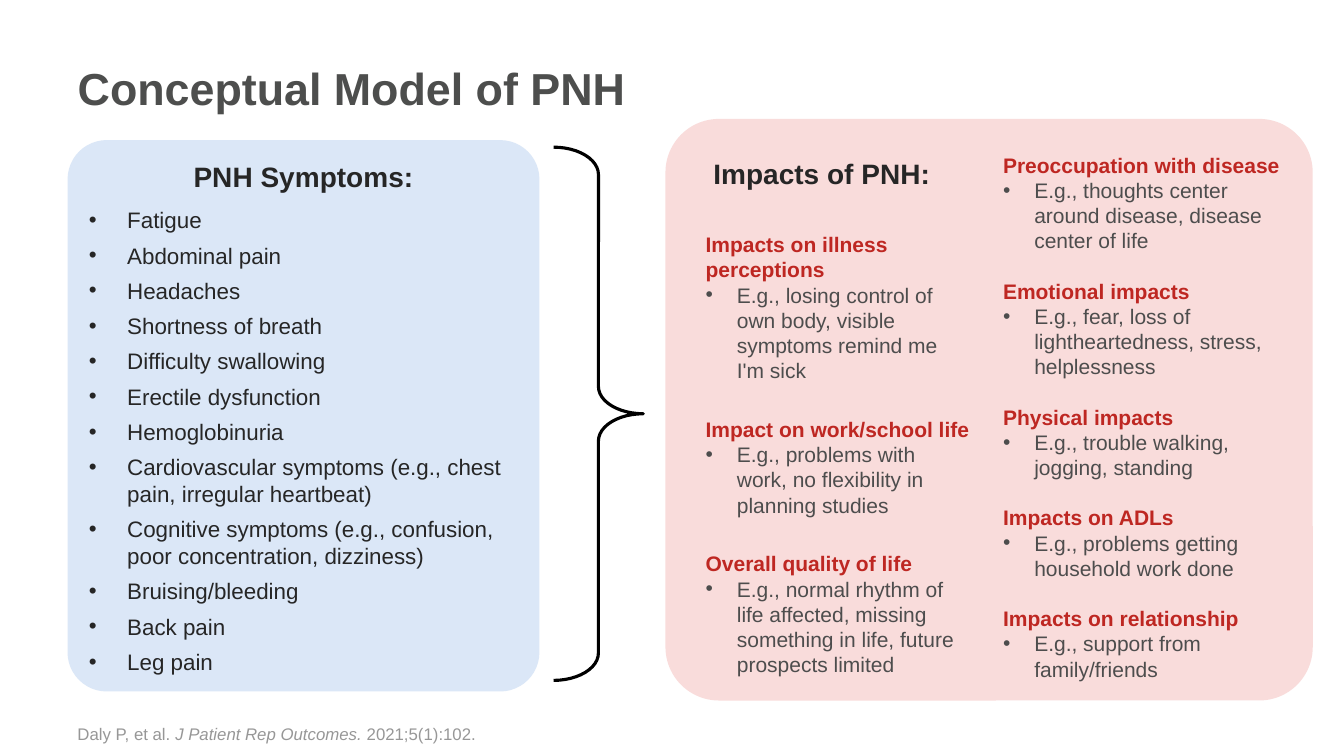
from lxml import etree
from pptx import Presentation
from pptx.dml.color import RGBColor
from pptx.enum import shapes, text
from pptx.oxml.ns import qn
from pptx.util import Inches, Pt

BLACK = RGBColor(0x00, 0x00, 0x00)
INK = RGBColor(0x26, 0x26, 0x26)
GRAY = RGBColor(0x4D, 0x4D, 0x4D)
TITLE_GRAY = RGBColor(0x4D, 0x4E, 0x4D)
LIGHT_GRAY = RGBColor(0x97, 0x97, 0x97)
RED = RGBColor(0xBE, 0x27, 0x22)
BLUE_PANEL = RGBColor(0xDB, 0xE7, 0xF7)
PINK_PANEL = RGBColor(0xF9, 0xDC, 0xDB)

SYMPTOMS = [
    "Fatigue",
    "Abdominal pain",
    "Headaches",
    "Shortness of breath",
    "Difficulty swallowing",
    "Erectile dysfunction",
    "Hemoglobinuria",
    "Cardiovascular symptoms (e.g., chest pain, irregular heartbeat)",
    "Cognitive symptoms (e.g., confusion, poor concentration, dizziness)",
    "Bruising/bleeding",
    "Back pain",
    "Leg pain",
]
LEFT_IMPACTS = [
    ("Impacts on illness perceptions",
     "E.g., losing control of own body, visible symptoms remind me I'm sick"),
    ("Impact on work/school life",
     "E.g., problems with work, no flexibility in planning studies"),
    ("Overall quality of life",
     "E.g., normal rhythm of life affected, missing something in life, future prospects limited"),
]
RIGHT_IMPACTS = [
    ("Preoccupation with disease",
     "E.g., thoughts center around disease, disease center of life"),
    ("Emotional impacts",
     "E.g., fear, loss of lightheartedness, stress, helplessness"),
    ("Physical impacts", "E.g., trouble walking, jogging, standing"),
    ("Impacts on ADLs", "E.g., problems getting household work done"),
    ("Impacts on relationship", "E.g., support from family/friends"),
]


def add_text(tf, words, size, color, bold=False, italic=False, indent=0,
             before=0, after=0, align=text.PP_ALIGN.LEFT, same_line=False):
    p = tf.paragraphs[-1]
    if p.runs and not same_line:
        p = tf.add_paragraph()
    if not same_line:
        p.alignment = align
        p.space_before, p.space_after = Pt(before), Pt(after)
    if indent:
        pPr = p._p.get_or_add_pPr()
        pPr.set("marL", str(Inches(indent)))
        pPr.set("indent", str(-Inches(indent)))
        etree.SubElement(pPr, qn("a:buFont")).set("typeface", "Arial")
        etree.SubElement(pPr, qn("a:buChar")).set("char", "•")
    r = p.add_run()
    r.text = words
    r.font.name, r.font.size = "Arial", Pt(size)
    r.font.bold, r.font.italic = bold, italic
    r.font.color.rgb = color


def add_box(parent, x, y, w, h, fill=None, adj=0):
    area = Inches(x), Inches(y), Inches(w), Inches(h)
    if fill is None:
        sp = parent.add_textbox(*area)
    else:
        sp = parent.add_shape(shapes.MSO_SHAPE.ROUNDED_RECTANGLE, *area)
        sp.adjustments[0] = adj
        sp.fill.solid()
        sp.fill.fore_color.rgb = fill
        sp.line.fill.background()
        sp.shadow.inherit = False
    sp.text_frame.word_wrap = True
    return sp.text_frame


prs = Presentation()
prs.slide_width, prs.slide_height = Inches(13.33), Inches(7.5)
s = prs.slides.add_slide(prs.slide_layouts[5])

title = s.shapes.title
title.left, title.top = Inches(0.67), Inches(0.22)
title.width, title.height = Inches(11.75), Inches(1.3)
tf = title.text_frame
tf.vertical_anchor = text.MSO_ANCHOR.MIDDLE
add_text(tf, "Conceptual Model of PNH", 32, TITLE_GRAY, bold=True)

tf = add_box(s.shapes, 0.67, 6.95, 11.75, 0.48)
tf.vertical_anchor = text.MSO_ANCHOR.BOTTOM
add_text(tf, "Daly P, et al. ", 12, LIGHT_GRAY)
add_text(tf, "J Patient Rep Outcomes. ", 12, LIGHT_GRAY, italic=True, same_line=True)
add_text(tf, "2021;5(1):102.", 12, LIGHT_GRAY, same_line=True)

tf = add_box(s.shapes, 0.67, 1.39, 4.68, 5.47, BLUE_PANEL, 0.083)
tf.vertical_anchor = text.MSO_ANCHOR.BOTTOM
for symptom in SYMPTOMS:
    add_text(tf, symptom, 16, INK, indent=0.38, after=6)

brace = s.shapes.add_shape(shapes.MSO_SHAPE.RIGHT_BRACE, Inches(5.49),
                           Inches(1.46), Inches(0.89), Inches(5.29))
brace.adjustments[0], brace.adjustments[1] = 0.305, 0.5
brace.fill.background()
brace.line.color.rgb = BLACK
brace.line.width = Pt(2.25)
brace.shadow.inherit = False

impacts = s.shapes.add_group_shape().shapes
add_box(impacts, 6.6, 1.18, 6.42, 5.77, PINK_PANEL, 0.092)

for parent, x, y, heading in [(s.shapes, 1.8, 1.53, "PNH Symptoms:"),
                              (impacts, 6.94, 1.5, "Impacts of PNH:")]:
    tf = add_box(parent, x, y, 2.42, 0.44)
    add_text(tf, heading, 20, INK, bold=True, after=6, align=text.PP_ALIGN.CENTER)

for x, y, w, h, gap, items in [(6.9, 2.25, 2.82, 4.81, 24, LEFT_IMPACTS),
                               (9.85, 1.46, 2.99, 5.33, 18, RIGHT_IMPACTS)]:
    tf = add_box(impacts, x, y, w, h)
    for i, (heading, example) in enumerate(items):
        add_text(tf, heading, 15, RED, bold=True, before=gap if i else 0)
        add_text(tf, example, 15, GRAY, indent=0.31)

prs.save("out.pptx")
